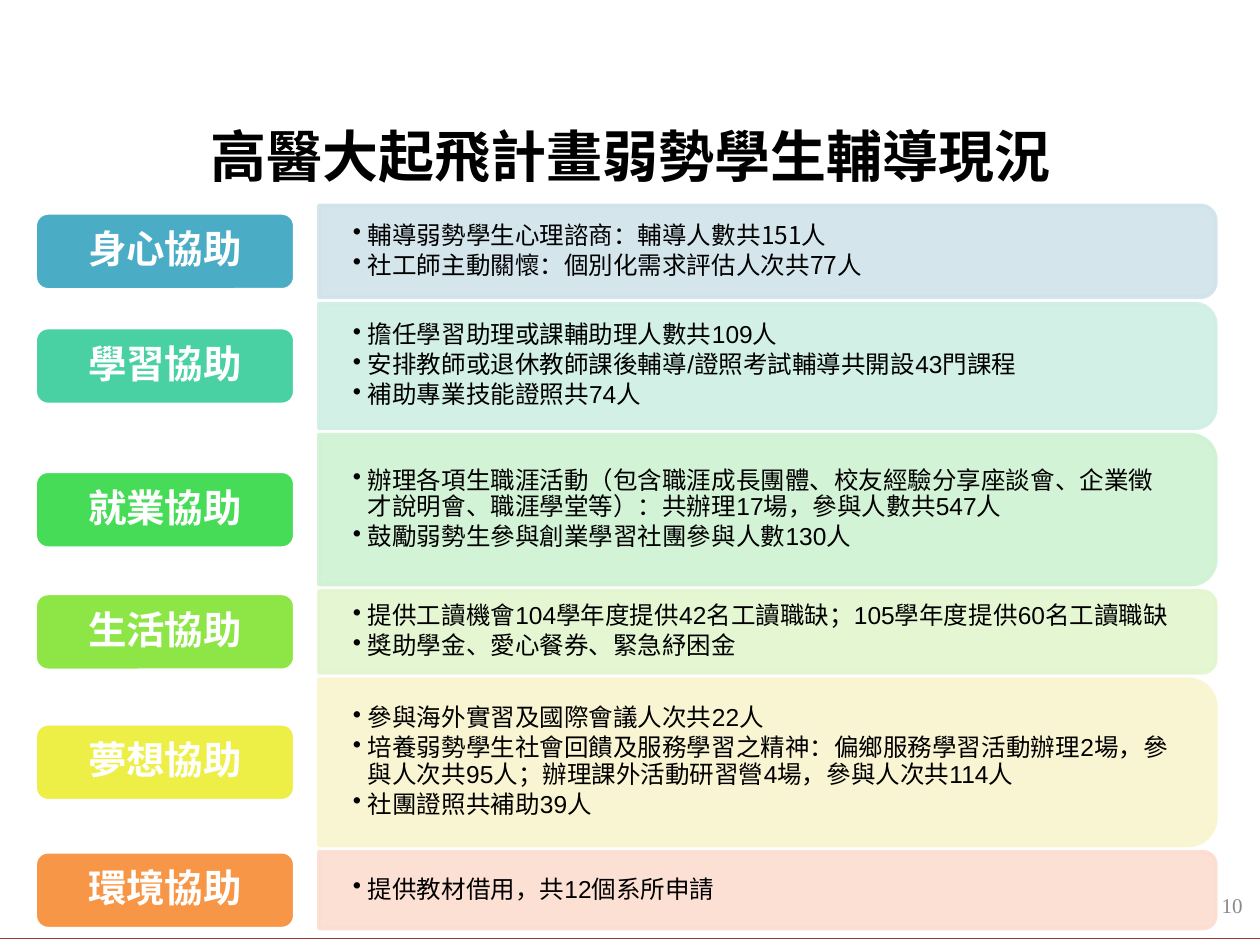
from dataclasses import dataclass

from lxml.etree import SubElement
from pptx import Presentation
from pptx.dml.color import RGBColor
from pptx.enum.shapes import MSO_CONNECTOR, MSO_SHAPE
from pptx.enum.text import MSO_ANCHOR, MSO_AUTO_SIZE, PP_ALIGN
from pptx.oxml.ns import qn
from pptx.util import Inches, Pt

CJK, LATIN, SERIF = "Noto Sans CJK SC", "Arial", "Times New Roman"
BLACK = RGBColor(0x00, 0x00, 0x00)
WHITE = RGBColor(0xFF, 0xFF, 0xFF)
GREY = RGBColor(0x89, 0x89, 0x89)
DARK_RED = RGBColor(0x95, 0x37, 0x35)

# Layout in inches: panels are stacked, each label is centred on its panel
STACK_TOP, PANEL_GAP = 1.63, 0.05
PANEL_LEFT, PANEL_WIDTH = 2.53, 7.12
LABEL_LEFT, LABEL_WIDTH, LABEL_HEIGHT = 0.28, 2.06, 0.61
CORNER_INSET = 0.05  # share of the panel height kept clear of the round corners


@dataclass
class Assistance:
    label: str
    label_color: RGBColor
    panel_color: RGBColor
    height: float
    items: list[str]
    font: str = LATIN


ASSISTANCE = [
    Assistance("身心協助", RGBColor(0x4B, 0xAC, 0xC6), RGBColor(0xD0, 0xE3, 0xEA), 0.73, [
        "輔導弱勢學生心理諮商：輔導人數共151人",
        "社工師主動關懷：個別化需求評估人次共77人",
    ], CJK),
    Assistance("學習協助", RGBColor(0x49, 0xD1, 0xA3), RGBColor(0xCF, 0xEF, 0xE5), 0.99, [
        "擔任學習助理或課輔助理人數共109人",
        "安排教師或退休教師課後輔導/證照考試輔導共開設43門課程",
        "補助專業技能證照共74人",
    ]),
    Assistance("就業協助", RGBColor(0x47, 0xDC, 0x57), RGBColor(0xCF, 0xF2, 0xD2), 1.19, [
        "辦理各項生職涯活動（包含職涯成長團體、校友經驗分享座談會、企業徵才說明會、職涯學堂等）：共辦理17場，參與人數共547人",
        "鼓勵弱勢生參與創業學習社團參與人數130人",
    ]),
    Assistance("生活協助", RGBColor(0x8D, 0xE6, 0x46), RGBColor(0xE2, 0xF6, 0xCE), 0.65, [
        "提供工讀機會104學年度提供42名工讀職缺；105學年度提供60名工讀職缺",
        "獎助學金、愛心餐券、緊急紓困金",
    ]),
    Assistance("夢想協助", RGBColor(0xEE, 0xEF, 0x46), RGBColor(0xF9, 0xF5, 0xCF), 1.32, [
        "參與海外實習及國際會議人次共22人",
        "培養弱勢學生社會回饋及服務學習之精神：偏鄉服務學習活動辦理2場，參與人次共95人；辦理課外活動研習營4場，參與人次共114人",
        "社團證照共補助39人",
    ]),
    Assistance("環境協助", RGBColor(0xF7, 0x96, 0x46), RGBColor(0xFC, 0xDD, 0xCF), 0.61, [
        "提供教材借用，共12個系所申請",
    ]),
]


def style(paragraph, size: float, color: RGBColor, font: str, bold: bool = False) -> None:
    paragraph.font.size = Pt(size)
    paragraph.font.bold = bold
    paragraph.font.color.rgb = color
    paragraph.font.name = font
    defaults = paragraph._p.pPr.find(qn("a:defRPr"))
    SubElement(defaults, qn("a:ea"), typeface=CJK)


def add_bullet(paragraph) -> None:
    properties = paragraph._p.get_or_add_pPr()
    properties.set("marL", str(Inches(0.12)))
    properties.set("indent", str(Inches(-0.12)))
    SubElement(properties, qn("a:buChar"), char="•")


def paint(shape, fill: RGBColor, line: RGBColor, opacity: int = 100) -> None:
    shape.shadow.inherit = False
    shape.fill.solid()
    shape.fill.fore_color.rgb = fill
    shape.line.color.rgb = line
    shape.line.width = Pt(2)
    if opacity < 100:
        for color in shape._element.spPr.iter(qn("a:srgbClr")):
            SubElement(color, qn("a:alpha"), val=str(opacity * 1000))


def add_panel(slide, row: Assistance, top: float) -> None:
    # The rounded side faces right, so the shape is turned about its centre
    center_x, center_y = PANEL_LEFT + PANEL_WIDTH / 2, top + row.height / 2
    panel = slide.shapes.add_shape(
        MSO_SHAPE.ROUND_2_SAME_RECTANGLE,
        Inches(center_x - row.height / 2), Inches(center_y - PANEL_WIDTH / 2),
        Inches(row.height), Inches(PANEL_WIDTH))
    panel.rotation = 90
    paint(panel, row.panel_color, row.panel_color, opacity=90)


def add_items(slide, row: Assistance, top: float) -> None:
    inset = row.height * CORNER_INSET
    items = slide.shapes.add_textbox(
        Inches(PANEL_LEFT), Inches(top + inset),
        Inches(PANEL_WIDTH - inset), Inches(row.height - 2 * inset)).text_frame
    items.word_wrap = True
    items.vertical_anchor = MSO_ANCHOR.MIDDLE
    items.margin_left = items.margin_right = Inches(0.27)
    items.margin_top = items.margin_bottom = Inches(0.14)
    items.text = "\n".join(row.items)
    for item in items.paragraphs:
        add_bullet(item)
        item.level = 1
        item.line_spacing = 0.9
        item.space_after = Pt(2)
        style(item, 14, BLACK, row.font)


def add_label(slide, row: Assistance, top: float) -> None:
    label = slide.shapes.add_shape(
        MSO_SHAPE.ROUNDED_RECTANGLE, Inches(LABEL_LEFT),
        Inches(top + (row.height - LABEL_HEIGHT) / 2),
        Inches(LABEL_WIDTH), Inches(LABEL_HEIGHT))
    paint(label, row.label_color, WHITE)
    label.text_frame.text = row.label
    label.text_frame.vertical_anchor = MSO_ANCHOR.MIDDLE
    name = label.text_frame.paragraphs[0]
    name.alignment = PP_ALIGN.CENTER
    name.line_spacing = 0.9
    style(name, 22, WHITE, CJK, bold=True)


def main() -> None:
    presentation = Presentation()
    presentation.slide_width, presentation.slide_height = Inches(10), Inches(7.5)
    slide = presentation.slides.add_slide(presentation.slide_layouts[5])

    # Footer rule
    rule = slide.shapes.add_connector(
        MSO_CONNECTOR.STRAIGHT, 0, Inches(7.45), Inches(10), Inches(7.45))
    rule.line.color.rgb = DARK_RED
    rule.line.width = Pt(0.75)
    SubElement(rule._element.spPr, qn("a:effectLst"))

    # Title
    title = slide.shapes.title
    title.left, title.top = Inches(0.51), Inches(0.91)
    title.width, title.height = Inches(9), Inches(0.64)
    title.text_frame.text = "高醫大起飛計畫弱勢學生輔導現況"
    title.text_frame.auto_size = MSO_AUTO_SIZE.NONE
    title.text_frame.vertical_anchor = MSO_ANCHOR.MIDDLE
    heading = title.text_frame.paragraphs[0]
    heading.alignment = PP_ALIGN.CENTER
    style(heading, 32, BLACK, CJK, bold=True)

    # Assistance rows
    top = STACK_TOP
    for row in ASSISTANCE:
        add_panel(slide, row, top)
        add_items(slide, row, top)
        add_label(slide, row, top)
        top += row.height + PANEL_GAP

    # Page number
    page = slide.shapes.add_textbox(
        Inches(7.63), Inches(6.98), Inches(2.33), Inches(0.4)).text_frame
    page.word_wrap = True
    page.vertical_anchor = MSO_ANCHOR.MIDDLE
    page.text = "10"
    page.paragraphs[0].alignment = PP_ALIGN.RIGHT
    style(page.paragraphs[0], 12, GREY, SERIF)

    presentation.save("out.pptx")


if __name__ == "__main__":
    main()
